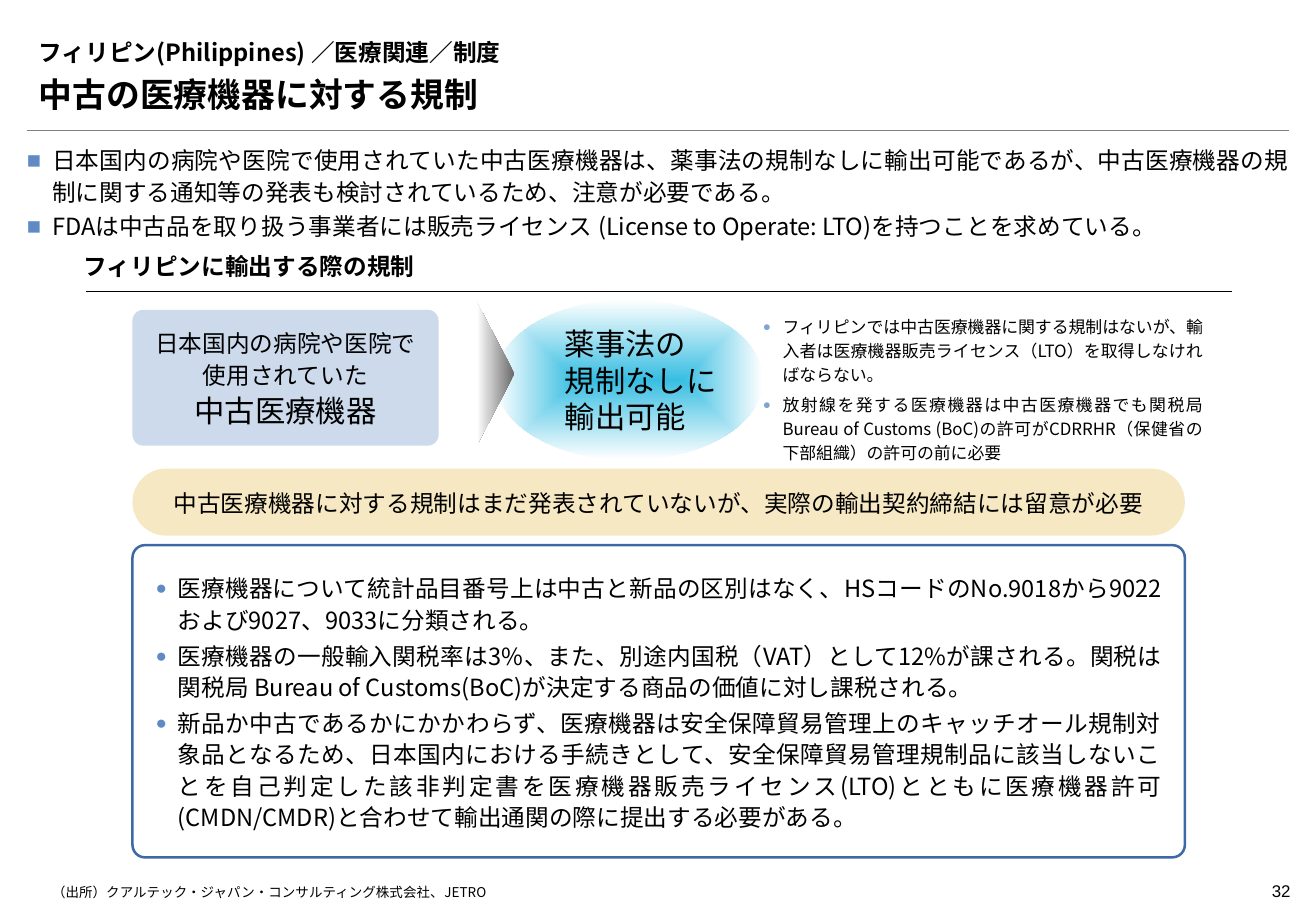
from lxml import etree
from pptx import Presentation
from pptx.dml.color import RGBColor
from pptx.enum import shapes, text
from pptx.oxml import parse_xml
from pptx.oxml.ns import nsdecls, qn
from pptx.util import Cm, Pt

FONT = "Noto Sans CJK JP"
BLACK = RGBColor(0x00, 0x00, 0x00)
GREY = RGBColor(0x7F, 0x7F, 0x7F)
DARK_GREY = RGBColor(0x6A, 0x6A, 0x6A)
WHITE = RGBColor(0xFF, 0xFF, 0xFF)
PALE_BLUE = RGBColor(0xCC, 0xDA, 0xEC)
BULLET_BLUE = RGBColor(0x5F, 0x8A, 0xC3)
LIGHT_BULLET = RGBColor(0x83, 0xA4, 0xD1)
FRAME_BLUE = RGBColor(0x3D, 0x6A, 0xA7)
CYAN = RGBColor(0x38, 0xBE, 0xE2)
CREAM = RGBColor(0xF6, 0xE8, 0xC2)

LEFT, CENTER, RIGHT, JUSTIFY = (text.PP_ALIGN.LEFT, text.PP_ALIGN.CENTER,
                                text.PP_ALIGN.RIGHT, text.PP_ALIGN.JUSTIFY)
TOP, MIDDLE, BOTTOM = (text.MSO_ANCHOR.TOP, text.MSO_ANCHOR.MIDDLE,
                       text.MSO_ANCHOR.BOTTOM)

# Content
TOPIC = "フィリピン(Philippines) ／医療関連／制度"
HEADLINE = "中古の医療機器に対する規制"
LEAD = [
    "日本国内の病院や医院で使用されていた中古医療機器は、薬事法の規制なしに輸出可能であるが、"
    "中古医療機器の規制に関する通知等の発表も検討されているため、注意が必要である。",
    "FDAは中古品を取り扱う事業者には販売ライセンス (License to Operate: LTO)を持つことを求めている。",
]
SECTION = "フィリピンに輸出する際の規制"
DEVICES = "日本国内の病院や医院で\n使用されていた\n中古医療機器"
EXPORTABLE = "薬事法の\n規制なしに\n輸出可能"
NOTES = [
    "フィリピンでは中古医療機器に関する規制はないが、輸入者は医療機器販売ライセンス（LTO）を"
    "取得しなければならない。",
    "放射線を発する医療機器は中古医療機器でも関税局Bureau of Customs (BoC)の許可が"
    "CDRRHR（保健省の下部組織）の許可の前に必要",
]
CAUTION = "中古医療機器に対する規制はまだ発表されていないが、実際の輸出契約締結には留意が必要"
RULES = [
    "医療機器について統計品目番号上は中古と新品の区別はなく、HSコードのNo.9018から9022および"
    "9027、9033に分類される。",
    "医療機器の一般輸入関税率は3%、また、別途内国税（VAT）として12%が課される。関税は関税局 "
    "Bureau of Customs(BoC)が決定する商品の価値に対し課税される。",
    "新品か中古であるかにかかわらず、医療機器は安全保障貿易管理上のキャッチオール規制対象品となるため、"
    "日本国内における手続きとして、安全保障貿易管理規制品に該当しないことを自己判定した該非判定書を"
    "医療機器販売ライセンス(LTO)とともに医療機器許可(CMDN/CMDR)と合わせて輸出通関の際に"
    "提出する必要がある。",
]
SOURCE = "（出所）クアルテック・ジャパン・コンサルティング株式会社、JETRO"
PAGE = "32"

# Shared positions in cm
MARGIN, FULL_WIDTH = 0.56, 26.39
PANEL_LEFT, PANEL_WIDTH = 2.77, 22


def place(shape, left, top, width, height):
    shape.left, shape.top, shape.width, shape.height = map(
        Cm, (left, top, width, height))


def set_bullet(paragraph, char, color, percent, indent):
    """Set the bullet with its hanging indent; char None removes it."""
    properties = paragraph._p.get_or_add_pPr()
    properties.set("marL", str(Cm(indent)))
    properties.set("indent", str(-Cm(indent) if char else 0))
    if char is None:
        etree.SubElement(properties, qn("a:buNone"))
        return
    holder = etree.SubElement(properties, qn("a:buClr"))
    etree.SubElement(holder, qn("a:srgbClr"), val=str(color))
    etree.SubElement(holder.getparent(), qn("a:buSzPct"), val=str(percent * 1000))
    etree.SubElement(properties, qn("a:buFont"), typeface="Arial")
    etree.SubElement(properties, qn("a:buChar"), char=char)


def format_run(run, size, bold, font):
    run.font.size, run.font.bold, run.font.name = Pt(size), bold, font
    run.font.color.rgb = BLACK
    etree.SubElement(run._r.get_or_add_rPr(), qn("a:ea"), typeface=font)


def write(shape, lines, size, bold=False, font=FONT, align=LEFT, anchor=TOP,
          insets=(0.25, 0.13, 0.25, 0.13), spacing=1.0, after=0, bullet=None,
          bullet_color=None, percent=100, indent=0, wrap=True):
    frame = shape.text_frame
    frame.auto_size = text.MSO_AUTO_SIZE.NONE
    frame.word_wrap, frame.vertical_anchor = wrap, anchor
    (frame.margin_left, frame.margin_top,
     frame.margin_right, frame.margin_bottom) = map(Cm, insets)
    for number, line in enumerate(lines):
        paragraph = frame.add_paragraph() if number else frame.paragraphs[0]
        paragraph.text = line
        set_bullet(paragraph, bullet, bullet_color, percent, indent)
        paragraph.alignment, paragraph.line_spacing = align, spacing
        paragraph.space_before, paragraph.space_after = Pt(0), Pt(after)
        for run in paragraph.runs:
            format_run(run, size, bold, font)
        for line_break in paragraph._p.findall(qn("a:br")):
            etree.SubElement(line_break, qn("a:rPr"), sz=str(size * 100))


def add_text(slide, box, lines, size, **style):
    shape = slide.shapes.add_textbox(*map(Cm, box))
    write(shape, lines, size, **style)


def add_panel(slide, kind, box, fill=None, line=None, corner=None):
    shape = slide.shapes.add_shape(kind, *map(Cm, box))
    shape.shadow.inherit = False
    if corner is not None:
        shape.adjustments[0] = corner
    if fill is None:
        shape.fill.background()
    else:
        shape.fill.solid()
        shape.fill.fore_color.rgb = fill
    if line is None:
        shape.line.fill.background()
    else:
        shape.line.color.rgb, shape.line.width = line, Pt(1.5)
    return shape


def set_gradient(shape, start, direction):
    """Fade from start to white along the given direction element."""
    properties = shape._element.spPr
    old_fill = properties.find(qn("a:noFill"))
    properties.replace(old_fill, parse_xml(
        f'<a:gradFill {nsdecls("a")} rotWithShape="1"><a:gsLst>'
        f'<a:gs pos="0"><a:srgbClr val="{start}"/></a:gs>'
        f'<a:gs pos="100000"><a:srgbClr val="{WHITE}"/></a:gs>'
        f'</a:gsLst>{direction}</a:gradFill>'))


def add_rule(slide, left, right, top, color, weight):
    rule = slide.shapes.add_connector(
        shapes.MSO_CONNECTOR.STRAIGHT, Cm(left), Cm(top), Cm(right), Cm(top))
    rule.line.color.rgb, rule.line.width = color, Pt(weight)
    etree.SubElement(rule._element.spPr, qn("a:effectLst"))


def main():
    presentation = Presentation()
    presentation.slide_width, presentation.slide_height = Cm(27.51), Cm(19.05)
    slide = presentation.slides.add_slide(presentation.slide_layouts[3])
    title, headline, lead = slide.placeholders
    kinds = shapes.MSO_SHAPE
    no_insets = (0, 0, 0, 0)

    add_rule(slide, MARGIN, MARGIN + FULL_WIDTH, 2.72, GREY, 0.25)
    add_text(slide, (24.97, 18.29, 2.01, 0.69), [PAGE], 10, font="Arial",
             align=RIGHT, insets=(0, 0.13, 0, 0.13))

    place(title, MARGIN, 0.53, FULL_WIDTH, 0.99)
    write(title, [TOPIC], 14, bold=True, anchor=BOTTOM)
    place(headline, MARGIN, 1.52, FULL_WIDTH, 0.99)
    write(headline, [HEADLINE], 20, bold=True, anchor=BOTTOM)
    place(lead, MARGIN, 3, FULL_WIDTH, 2.06)
    write(lead, LEAD, 14, align=JUSTIFY, insets=no_insets, spacing=1.1, after=2,
          bullet="■", bullet_color=BULLET_BLUE, indent=0.53)

    devices = add_panel(slide, kinds.ROUNDED_RECTANGLE,
                        (PANEL_LEFT, 6.48, 6.4, 2.84), PALE_BLUE, corner=0.08)
    write(devices, [DEVICES], 14, align=CENTER, anchor=MIDDLE, spacing=1.1, after=3)
    devices.text_frame.paragraphs[0].runs[-1].font.size = Pt(18)

    exportable = add_panel(slide, kinds.OVAL, (10.36, 6.27, 5.59, 3.35))
    set_gradient(exportable, CYAN, '<a:path path="shape"><a:fillToRect l="50000" '
                 't="50000" r="50000" b="50000"/></a:path>')
    write(exportable, [EXPORTABLE], 18, anchor=MIDDLE, indent=0.38, wrap=False)

    add_text(slide, (15.95, 6.53, 9.19, 3.61), NOTES, 10, align=JUSTIFY,
             insets=no_insets, spacing=1.2, after=3, bullet="●",
             bullet_color=LIGHT_BULLET, percent=80, indent=0.41)

    caution = add_panel(slide, kinds.ROUNDED_RECTANGLE,
                        (PANEL_LEFT, 9.8, PANEL_WIDTH, 1.4), CREAM, corner=0.5)
    write(caution, [CAUTION], 14, align=CENTER, anchor=MIDDLE, spacing=1.1)

    arrow = add_panel(slide, kinds.ISOSCELES_TRIANGLE, (8.86, 7.42, 3, 0.79))
    arrow.rotation = 90
    set_gradient(arrow, DARK_GREY, '<a:lin ang="5400000" scaled="0"/>')

    rules = add_panel(slide, kinds.ROUNDED_RECTANGLE,
                      (PANEL_LEFT, 11.4, PANEL_WIDTH, 6.53), line=FRAME_BLUE, corner=0.04)
    write(rules, RULES, 14, align=JUSTIFY, anchor=MIDDLE,
          insets=(0.41, 0.13, 0.41, 0.13), spacing=1.1, after=3, bullet="●",
          bullet_color=BULLET_BLUE, percent=80, indent=0.46)

    add_rule(slide, 1.8, 25.76, 6.1, BLACK, 0.75)
    add_text(slide, (1.75, 5.28, 24, 0.79), [SECTION], 14, bold=True,
             anchor=BOTTOM, insets=(0, 0.13, 0, 0.2))
    add_text(slide, (1.09, 18.49, 24, 0.41), [SOURCE], 8, insets=no_insets)

    presentation.save("out.pptx")


if __name__ == "__main__":
    main()
